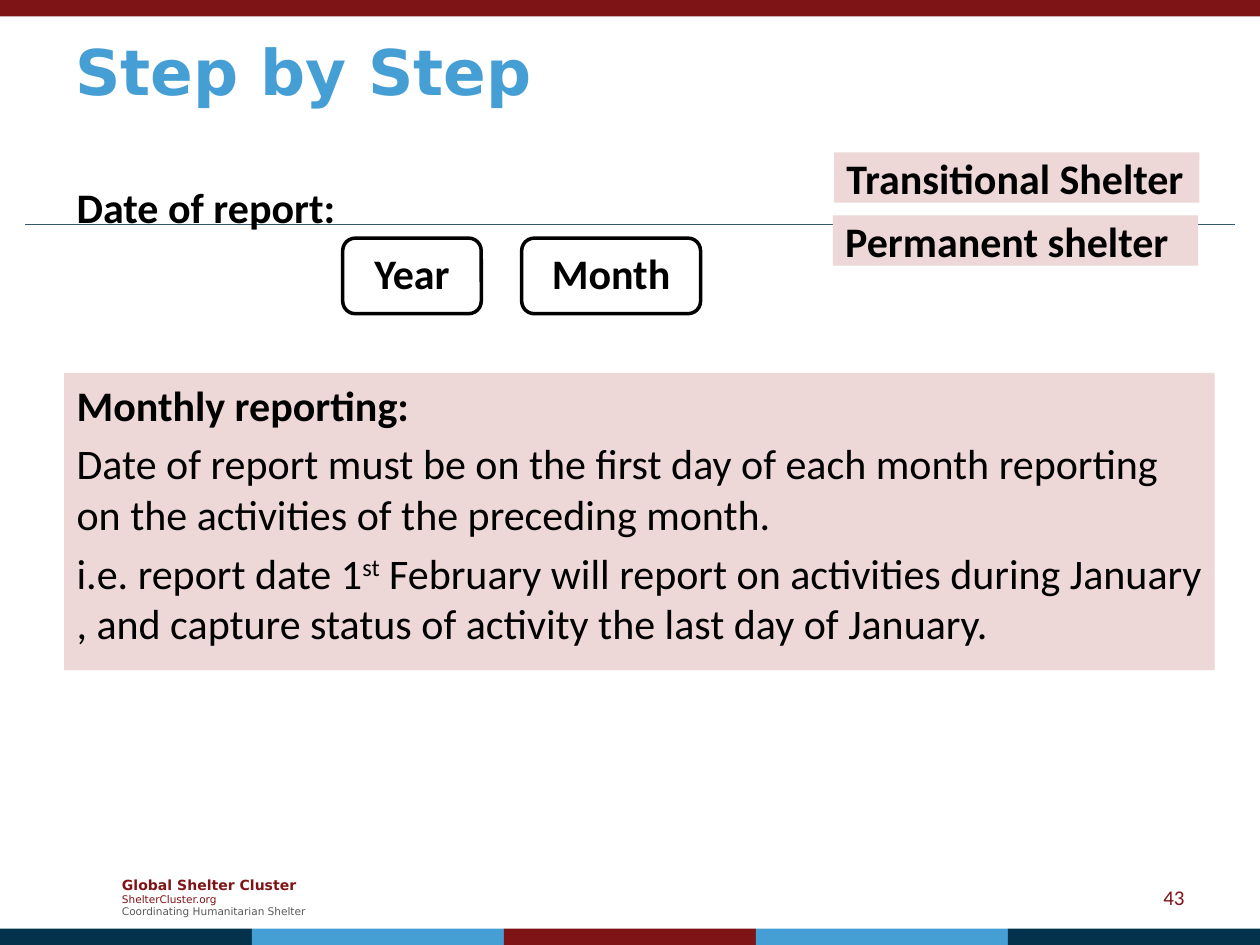
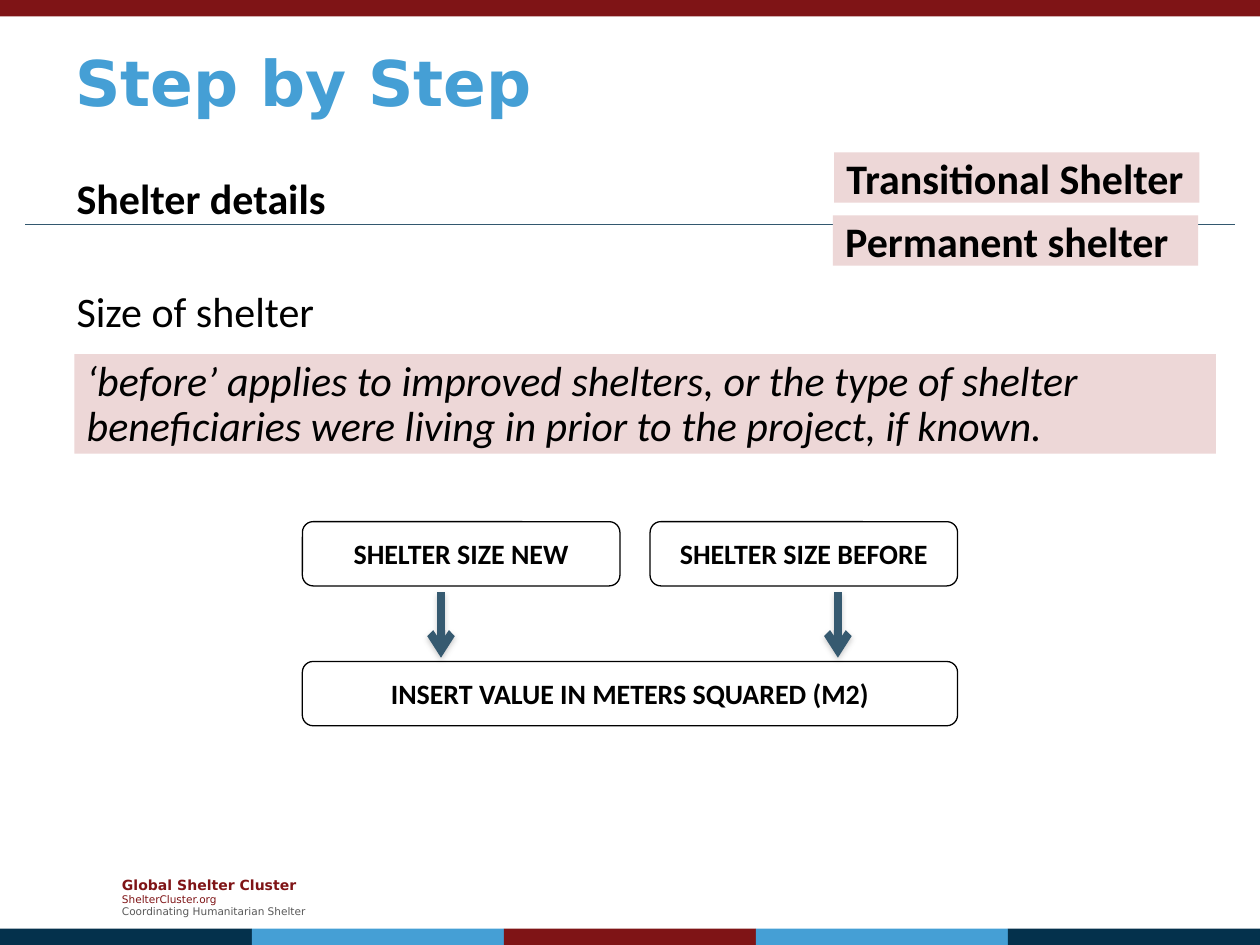
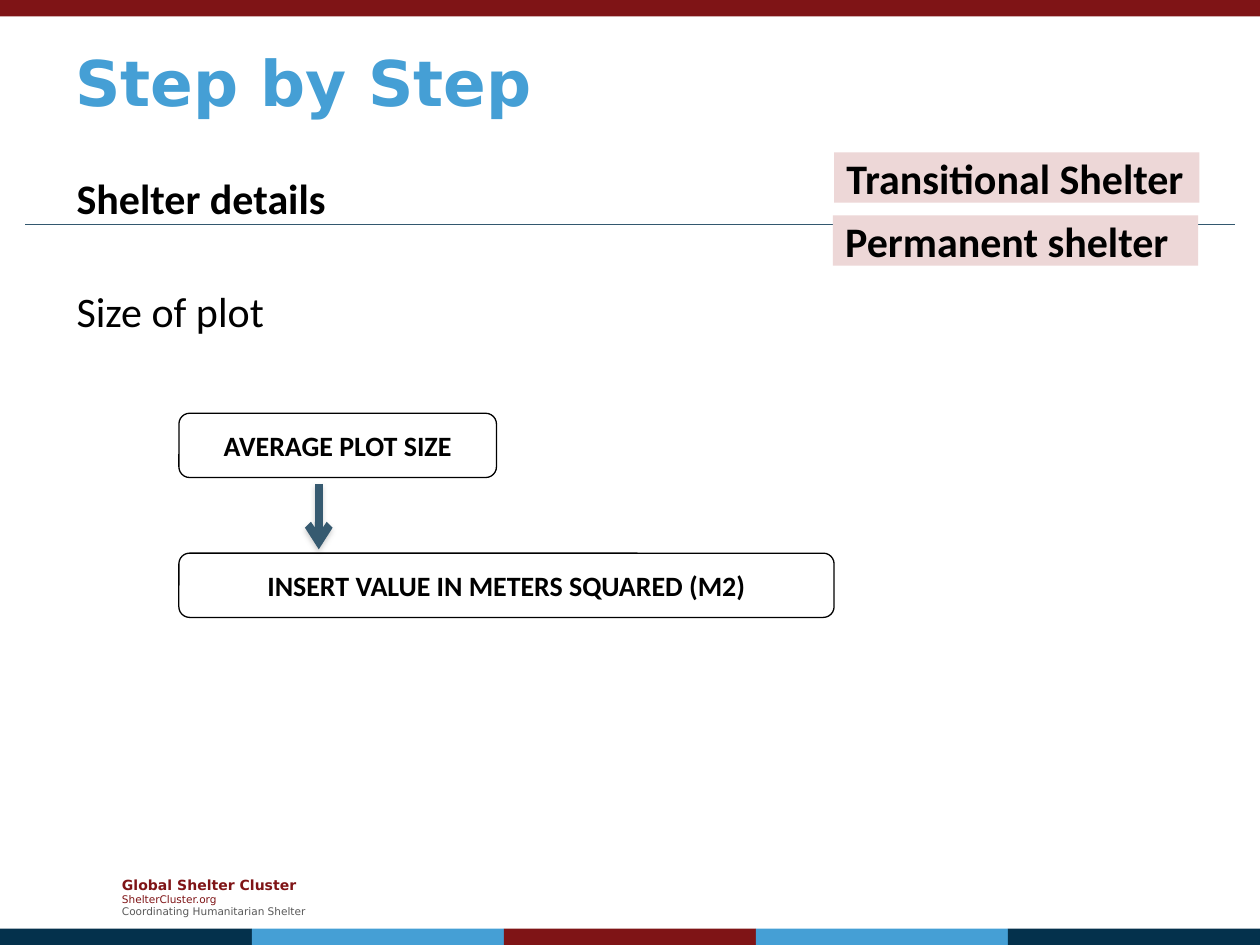
"""Build three step-by-step slides on shelter reporting."""
from dataclasses import dataclass

from lxml import etree
from pptx import Presentation
from pptx.dml.color import RGBColor
from pptx.enum import shapes, text
from pptx.oxml import ns
from pptx.util import Inches, Pt


@dataclass(frozen=True)
class Theme:
    """Colours, fonts and type sizes of the deck."""
    red: str = "7F1416"
    navy: str = "04314C"
    blue: str = "459FD5"
    rule: str = "33586F"
    arrow: str = "365A70"
    shadow: str = "808080"
    pink: str = "EDD7D7"
    white: str = "FFFFFF"
    black: str = "000000"
    grey: str = "595959"
    heading_font: str = "DejaVu Sans"
    body_font: str = "Calibri"
    title_size: int = 36
    body_size: int = 24
    label_size: int = 16
    number_size: int = 12
    footer_size: int = 8
    small_size: int = 6
    paragraph_gap: float = 4.8


THEME = Theme()


@dataclass(frozen=True)
class Run:
    """A stretch of text in one format."""
    words: str
    size: int = THEME.body_size
    bold: bool = False
    italic: bool = False
    color: str = THEME.black
    font: str = THEME.body_font
    raised: bool = False


class Deck:
    """Holds the theme, the presentation and the current slide."""

    def __init__(self, theme):
        self.theme = theme
        self.presentation = Presentation()
        self.presentation.slide_width = Inches(10)
        self.presentation.slide_height = Inches(7.5)
        self.slide = None

    def add_text(self, shape, paragraphs, align=text.PP_ALIGN.LEFT,
                 anchor=text.MSO_ANCHOR.TOP, spacing=None, gap=0):
        """Fill a shape with paragraphs, each a list of runs."""
        frame = shape.text_frame
        frame.word_wrap = True
        frame.vertical_anchor = anchor
        for index, runs in enumerate(paragraphs):
            paragraph = frame.add_paragraph() if index else frame.paragraphs[0]
            paragraph.alignment = align
            paragraph.space_before = Pt(gap if index else 0)
            if spacing:
                paragraph.line_spacing = spacing
            for part in runs:
                run = paragraph.add_run()
                run.text = part.words
                run.font.name = part.font
                run.font.size = Pt(part.size)
                run.font.bold = part.bold
                run.font.italic = part.italic
                run.font.color.rgb = RGBColor.from_string(part.color)
                if part.raised:
                    run.font._element.set("baseline", "30000")

    def text_box(self, left, top, width, height, paragraphs, **layout):
        """Add plain text."""
        box = self.slide.shapes.add_textbox(
            Inches(left), Inches(top), Inches(width), Inches(height))
        self.add_text(box, paragraphs, **layout)

    def block(self, left, top, width, height, paragraphs=(), fill=None,
              line=None, weight=0.75, rounded=False, **layout):
        """Add a rectangle, with square or rounded corners."""
        kind = shapes.MSO_SHAPE.ROUNDED_RECTANGLE if rounded else shapes.MSO_SHAPE.RECTANGLE
        shape = self.slide.shapes.add_shape(
            kind, Inches(left), Inches(top), Inches(width), Inches(height))
        shape.shadow.inherit = False
        if fill:
            shape.fill.solid()
            shape.fill.fore_color.rgb = RGBColor.from_string(fill)
        else:
            shape.fill.background()
        if line:
            shape.line.color.rgb = RGBColor.from_string(line)
            shape.line.width = Pt(weight)
        else:
            shape.line.fill.background()
        self.add_text(shape, paragraphs, **layout)

    def line(self, start, end, color, weight):
        """Add a straight line and return it with its empty effect list."""
        connector = self.slide.shapes.add_connector(
            shapes.MSO_CONNECTOR.STRAIGHT, *map(Inches, start + end))
        connector.line.color.rgb = RGBColor.from_string(color)
        connector.line.width = Pt(weight)
        effects = etree.SubElement(connector._element.spPr, ns.qn("a:effectLst"))
        return connector, effects

    def down_arrow(self, x, top, length):
        """Add a thick downward arrow with a soft shadow."""
        connector, effects = self.line((x, top), (x, top + length), self.theme.arrow, 4.5)
        etree.SubElement(connector.line._get_or_add_ln(), ns.qn("a:tailEnd"), type="arrow")
        shadow = etree.SubElement(
            effects, ns.qn("a:outerShdw"), blurRad=str(Pt(3.1)), dist=str(Pt(1.6)),
            dir="5400000", rotWithShape="0")
        color = etree.SubElement(shadow, ns.qn("a:srgbClr"), val=self.theme.shadow)
        etree.SubElement(color, ns.qn("a:alpha"), val="38000")

    def footer(self):
        """Add the organisation lines and the colour bands."""
        theme = self.theme
        lines = (("Global Shelter Cluster", theme.footer_size, True, theme.red),
                 ("ShelterCluster.org", theme.small_size, False, theme.red),
                 ("Coordinating Humanitarian Shelter", theme.small_size, False, theme.grey))
        self.text_box(0.87, 6.9, 1.73, 0.44, [
            [Run(words, size, bold, color=color, font=theme.heading_font)]
            for words, size, bold, color in lines], anchor=text.MSO_ANCHOR.MIDDLE)
        bands = (theme.navy, theme.blue, theme.red, theme.blue, theme.navy)
        width = 10 / len(bands)
        for index, color in enumerate(bands):
            self.block(index * width, 7.37, width, 0.13, fill=color)

    def start_slide(self, title_top):
        """Start a slide with its bands, rule and title."""
        theme = self.theme
        self.slide = self.presentation.slides.add_slide(self.presentation.slide_layouts[6])
        self.footer()
        self.block(0, 0, 10, 0.13, fill=theme.red)
        self.line((0.2, 1.78), (9.8, 1.78), theme.rule, 0.75)
        title = Run("Step by Step", theme.title_size, True,
                    color=theme.blue, font=theme.heading_font)
        self.text_box(0.5, title_top, 9, 0.8, [[title]])

    def shelter_tags(self):
        """Add the two shelter types at the top right."""
        tags = ((6.62, 1.21, "Transitional Shelter"), (6.61, 1.71, "Permanent shelter"))
        for left, top, words in tags:
            self.block(left, top, 2.9, 0.4, [[Run(words, bold=True)]],
                       fill=self.theme.pink, spacing=0.9)

    def details_heading(self, topic):
        """Add the section heading and its topic."""
        self.text_box(0.51, 1.4, 3.07, 0.54, [[Run("Shelter details", bold=True)]], spacing=0.8)
        self.text_box(0.51, 2.26, 2.83, 0.71, [[Run(topic)]], spacing=0.9)

    def date_field(self, left, width, words):
        """Add a field of the report date."""
        self.block(left, 1.89, width, 0.6, [[Run(words, bold=True)]],
                   fill=self.theme.white, line=self.theme.black, weight=2,
                   rounded=True, align=text.PP_ALIGN.CENTER)

    def flow_box(self, left, top, width, words):
        """Add a labelled box of a flow."""
        self.block(left, top, width, 0.51, [[Run(words, self.theme.label_size, True)]],
                   line=self.theme.black, rounded=True,
                   align=text.PP_ALIGN.CENTER, anchor=text.MSO_ANCHOR.MIDDLE)

    def value_flow(self, left, top, inputs):
        """Add input boxes with arrows down to the value box."""
        for offset, width, arrow_offset, words in inputs:
            self.flow_box(left + offset, top, width, words)
            self.down_arrow(left + arrow_offset, top + 0.56, 0.52)
        self.flow_box(left, top + 1.11, 5.2, "INSERT VALUE IN METERS SQUARED (M2)")


def report_date(deck):
    """Build the slide on the date of report."""
    theme = deck.theme
    deck.start_slide(0.21)
    deck.text_box(0.51, 1.39, 9.13, 0.87, [[Run("Date of report:", bold=True)]])
    deck.text_box(7.17, 6.92, 2.33, 0.4, [[Run("43", theme.number_size, color=theme.red)]],
                  align=text.PP_ALIGN.RIGHT, anchor=text.MSO_ANCHOR.MIDDLE)
    deck.date_field(2.72, 1.1, "Year")
    deck.date_field(4.14, 1.42, "Month")
    deck.block(0.51, 2.96, 9.13, 2.36, [
        [Run("Monthly reporting:", bold=True)],
        [Run("Date of report must be on the first day of each month reporting "
             "on the activities of the preceding month.")],
        [Run("i.e. report date 1"), Run("st", raised=True),
         Run(" February will report on activities during January , "
             "and capture status of activity the last day of January.")],
    ], fill=theme.pink, gap=theme.paragraph_gap)
    deck.shelter_tags()


def shelter_size(deck):
    """Build the slide on the size of shelter."""
    deck.start_slide(0.3)
    deck.details_heading("Size of shelter")
    deck.value_flow(2.4, 4.14, [(0, 2.52, 1.1, "SHELTER SIZE NEW"),
                                (2.76, 2.44, 4.25, "SHELTER SIZE BEFORE")])
    deck.block(0.59, 2.81, 9.06, 0.79, [[
        Run("‘before’ applies to improved shelters, or the type of shelter "
            "beneficiaries were living in prior to the project, if known.", italic=True)
    ]], fill=deck.theme.pink, spacing=0.9)
    deck.shelter_tags()


def plot_size(deck):
    """Build the slide on the size of plot."""
    deck.start_slide(0.3)
    deck.details_heading("Size of plot")
    deck.value_flow(1.42, 3.28, [(0, 2.52, 1.11, "AVERAGE PLOT SIZE")])
    deck.shelter_tags()


def main():
    """Build and save the deck."""
    deck = Deck(THEME)
    for build in (report_date, shelter_size, plot_size):
        build(deck)
    deck.presentation.save("out.pptx")


if __name__ == "__main__":
    main()
